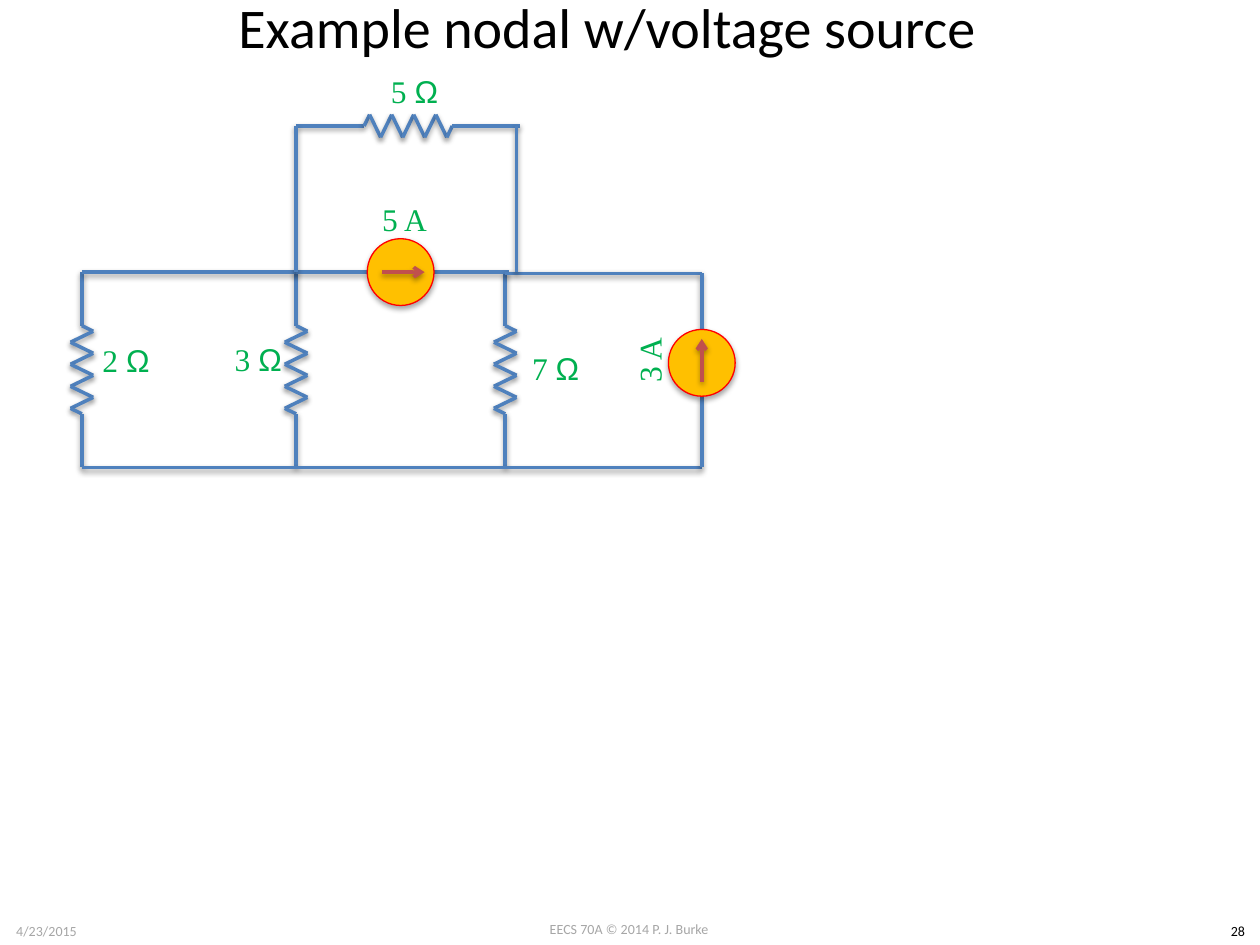
from lxml import etree
from pptx import Presentation
from pptx.dml.color import RGBColor
from pptx.enum.shapes import MSO_CONNECTOR, MSO_SHAPE
from pptx.enum.text import MSO_ANCHOR, PP_ALIGN
from pptx.oxml.ns import qn
from pptx.util import Inches, Pt

STRAIGHT = MSO_CONNECTOR.STRAIGHT
OVAL = MSO_SHAPE.OVAL
MIDDLE, TOP = MSO_ANCHOR.MIDDLE, MSO_ANCHOR.TOP
CENTER = PP_ALIGN.CENTER

BLACK = RGBColor(0x00, 0x00, 0x00)
GRAY = RGBColor(0xA6, 0xA6, 0xA6)
BLUE = RGBColor(0x4F, 0x81, 0xBD)
BRICK = RGBColor(0xC0, 0x50, 0x4D)
AMBER = RGBColor(0xFF, 0xC0, 0x00)
RED = RGBColor(0xFF, 0x00, 0x00)
GREEN = RGBColor(0x00, 0xB0, 0x50)

ZIGZAG_LENGTH = 0.7
ZIGZAG_PEAKS = 8
ZIGZAG_SWING = 0.09
SOURCE_SIZE = 0.53


def add_shadow(item, distance, opacity):
    effects = etree.SubElement(item._element.spPr, qn("a:effectLst"))
    shadow = etree.SubElement(
        effects, qn("a:outerShdw"), blurRad=str(Pt(3.1)), dist=str(Pt(distance)),
        dir="5400000", rotWithShape="0")
    color = etree.SubElement(shadow, qn("a:srgbClr"), val=str(BLACK))
    etree.SubElement(color, qn("a:alpha"), val=str(opacity * 1000))


def add_wire(page, start, end, color=BLUE, arrow=False):
    wire = page.shapes.add_connector(
        STRAIGHT, *(Inches(value) for value in (*start, *end)))
    wire.line.color.rgb = color
    wire.line.width = Pt(2)
    if arrow:
        outline = wire._element.spPr.find(qn("a:ln"))
        etree.SubElement(outline, qn("a:tailEnd"), type="arrow")
    add_shadow(wire, 1.6, 38)


def add_text(page, box, text, size, color, font, anchor=MIDDLE, wrap=True):
    text_box = page.shapes.add_textbox(*(Inches(value) for value in box))
    frame = text_box.text_frame
    frame.word_wrap = wrap
    frame.vertical_anchor = anchor
    para = frame.paragraphs[0]
    para.alignment = CENTER
    para.font.size = Pt(size)
    para.font.color.rgb = color
    para.font.name = font
    para.add_run().text = text
    return text_box


def add_label(page, center, value, unit, rotation=0):
    width, height = 1.19, 0.73
    box = (center[0] - width / 2, center[1] - height / 2, width, height)
    label = add_text(page, box, f"{value} ", 18, GREEN, "Times New Roman")
    label.rotation = rotation
    para = label.text_frame.paragraphs[0]
    span = para.add_run()
    span.text = unit
    if unit == "Ω":
        span.font.name = "Arial"


def add_resistor(page, start, end, swing=ZIGZAG_SWING):
    horizontal = start[1] == end[1]
    axis = 0 if horizontal else 1
    first = (start[axis] + end[axis] - ZIGZAG_LENGTH) / 2
    step = ZIGZAG_LENGTH / ZIGZAG_PEAKS
    offsets = [(first, 0)]
    for peak in range(ZIGZAG_PEAKS):
        offsets.append((first + (peak + 0.5) * step, swing * (-1) ** peak))
    offsets.append((first + ZIGZAG_LENGTH, 0))
    points = [(along, start[1] + across) if horizontal
              else (start[0] + across, along) for along, across in offsets]
    points = [start, *points, end]
    for near, far in zip(points, points[1:]):
        add_wire(page, near, far)


def add_current_source(page, center, direction):
    x, y = center
    dx, dy = direction
    radius = SOURCE_SIZE / 2
    circle = page.shapes.add_shape(
        OVAL, Inches(x - radius), Inches(y - radius),
        Inches(SOURCE_SIZE), Inches(SOURCE_SIZE))
    circle.fill.solid()
    circle.fill.fore_color.rgb = AMBER
    circle.line.color.rgb = RED
    circle.line.width = Pt(0.75)
    add_shadow(circle, 1.8, 35)
    add_wire(page, (x - 0.15 * dx, y - 0.15 * dy),
             (x + 0.19 * dx, y + 0.19 * dy), BRICK, arrow=True)


def add_circuit(page, box):
    left, top, width, height = box
    right, bottom = left + width, top + height
    middle = top + 1.16
    second, third = left + 1.7, left + 3.36
    bridge_right = third + 0.09
    radius = SOURCE_SIZE / 2
    across = (left + 2.53, middle)
    upward = (right, top + 1.88)

    for column in (left, second, third):
        add_resistor(page, (column, middle), (column, bottom))
    add_resistor(page, (second, top), (bridge_right + 0.03, top), -ZIGZAG_SWING)

    for start, end in (
        ((left, bottom), (right, bottom)),
        ((left, middle), (second, middle)),
        ((second, middle), (across[0] - radius, middle)),
        ((across[0] + radius, middle), (third + 0.03, middle)),
        ((third, middle + 0.01), (right, middle + 0.01)),
        ((second, middle), (second, top)),
        ((bridge_right, middle), (bridge_right, top)),
        ((right, middle + 0.01), (right, upward[1] - radius)),
        ((right, upward[1] + radius), (right, bottom)),
    ):
        add_wire(page, start, end)

    add_current_source(page, across, (1, 0))
    add_current_source(page, upward, (0, -1))

    for x, y, value, unit, rotation in (
        (0.35, 1.86, 2, "Ω", 0),
        (1.4, 1.85, 3, "Ω", 0),
        (3.76, 1.92, 7, "Ω", 0),
        (2.64, -0.28, 5, "Ω", 0),
        (2.56, 0.74, 5, "A", 0),
        (4.5, 1.86, 3, "A", 270),
    ):
        add_label(page, (left + x, top + y), value, unit, rotation)


def add_footer(page, box):
    left, top, width, height = box
    for x, y, item_width, text, color in (
        (0, 0.01, 0.74, "4/23/2015", GRAY),
        (3.83, 0, 2.33, "EECS 70A © 2014 P. J. Burke", GRAY),
        (width - 0.35, 0.01, 0.35, "28", BLACK),
    ):
        add_text(page, (left + x, top + y, item_width, height), text, 8,
                 color, "Calibri", anchor=TOP, wrap=False)


def main():
    deck = Presentation()
    deck.slide_width, deck.slide_height = Inches(10), Inches(7.5)
    page = deck.slides.add_slide(deck.slide_layouts[6])
    add_text(page, (0.32, -0.3, 9, 1.02), "Example nodal w/voltage source",
             32, BLACK, "Calibri")
    add_circuit(page, (0.65, 1, 4.92, 2.71))
    add_footer(page, (0, 7.26, 10, 0.24))
    deck.save("out.pptx")


if __name__ == "__main__":
    main()
